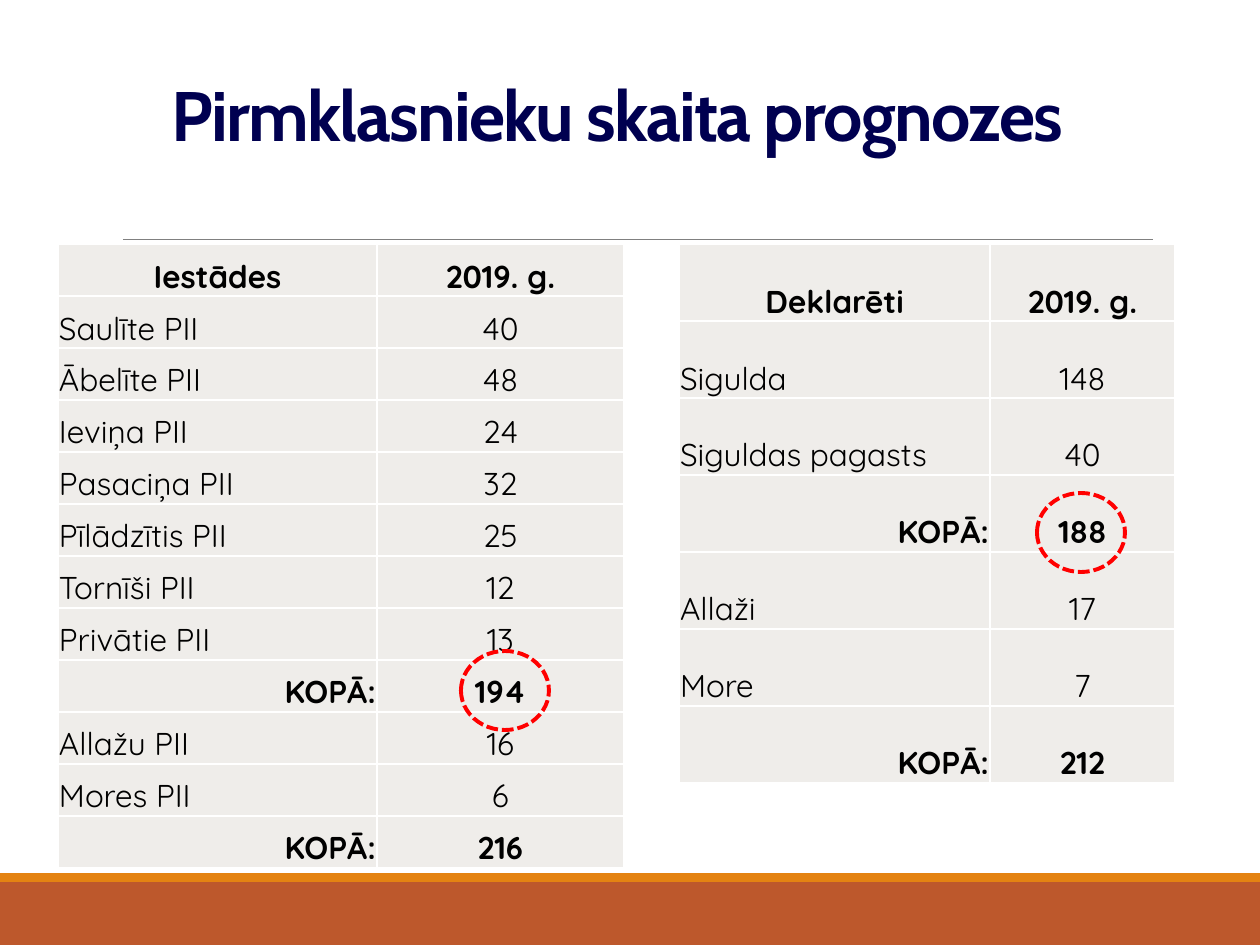
from dataclasses import dataclass

from lxml import etree
from pptx import Presentation
from pptx.dml.color import RGBColor
from pptx.enum import dml, shapes, text
from pptx.oxml.ns import qn
from pptx.util import Emu, Pt

EMU_PER_PX = 914400 / 126
ALIGN = text.PP_ALIGN
TOTAL = "KOPĀ:"


@dataclass(frozen=True)
class Bar:
    top: int
    height: int
    color: str


@dataclass(frozen=True)
class CountTable:
    left: int
    top: int
    columns: tuple[int, int]
    row_height: int
    rows: tuple[tuple[str, str], ...]


@dataclass(frozen=True)
class Ring:
    left: int
    top: int
    width: int = 88
    height: int = 79


BARS = (Bar(882, 63, "BD582C"), Bar(873, 9, "E48312"))

TABLES = (
    CountTable(58, 244, (319, 247), 52, (
        ("Iestādes", "2019. g."),
        ("Saulīte PII", "40"),
        ("Ābelīte PII", "48"),
        ("Ieviņa PII", "24"),
        ("Pasaciņa PII", "32"),
        ("Pīlādzītis PII", "25"),
        ("Tornīši PII", "12"),
        ("Privātie PII", "13"),
        (TOTAL, "194"),
        ("Allažu PII", "16"),
        ("Mores PII", "6"),
        (TOTAL, "216"),
    )),
    CountTable(679, 244, (311, 185), 77, (
        ("Deklarēti", "2019. g."),
        ("Sigulda", "148"),
        ("Siguldas pagasts", "40"),
        (TOTAL, "188"),
        ("Allaži", "17"),
        ("More", "7"),
        (TOTAL, "212"),
    )),
)

RINGS = (Ring(461, 651), Ring(1037, 493))


def px(length: int) -> Emu:
    return Emu(round(length * EMU_PER_PX))


def rgb(color: str) -> RGBColor:
    return RGBColor.from_string(color)


def add_span(para, words: str, font: str, size: int, color: str, bold: bool):
    span = para.add_run()
    span.text = words
    span.font.name = font
    span.font.size = Pt(size)
    span.font.bold = bold
    span.font.color.rgb = rgb(color)
    return span


def draw_bar(page, bar: Bar) -> None:
    box = page.shapes.add_shape(shapes.MSO_SHAPE.RECTANGLE, 0, px(bar.top), px(1260), px(bar.height))
    box.shadow.inherit = False
    box.fill.solid()
    box.fill.fore_color.rgb = rgb(bar.color)
    box.line.fill.background()


def draw_rule(page) -> None:
    rule = page.shapes.add_connector(shapes.MSO_CONNECTOR.STRAIGHT, px(123), px(239), px(1153), px(239))
    rule.line.color.rgb = rgb("808080")
    rule.line.width = Pt(0.5)
    etree.SubElement(rule._element.spPr, qn("a:effectLst"))


def add_borders(cell, color: str, width: Emu) -> None:
    properties = cell._tc.get_or_add_tcPr()
    for side in ("a:lnL", "a:lnR", "a:lnT", "a:lnB"):
        border = etree.SubElement(properties, qn(side), w=str(width))
        fill = etree.SubElement(border, qn("a:solidFill"))
        etree.SubElement(fill, qn("a:srgbClr"), val=color)


def fill_cell(cell, words: str, align, bold: bool) -> None:
    add_borders(cell, "FFFFFF", Pt(1))
    cell.fill.solid()
    cell.fill.fore_color.rgb = rgb("EFEDEA")
    cell.margin_left = cell.margin_right = cell.margin_top = px(1)
    cell.margin_bottom = 0
    cell.vertical_anchor = text.MSO_ANCHOR.BOTTOM
    para = cell.text_frame.paragraphs[0]
    para.alignment = align
    add_span(para, words, "Quicksand", 18, "000000", bold)


def draw_table(page, spec: CountTable) -> None:
    frame = page.shapes.add_table(
        len(spec.rows), len(spec.columns), px(spec.left), px(spec.top),
        px(sum(spec.columns)), px(spec.row_height * len(spec.rows)))
    table = frame.table
    for column, width in zip(table.columns, spec.columns):
        column.width = px(width)
    for index, (label, count) in enumerate(spec.rows):
        table.rows[index].height = px(spec.row_height)
        is_header, is_total = index == 0, label == TOTAL
        label_align = ALIGN.CENTER if is_header else ALIGN.RIGHT if is_total else ALIGN.LEFT
        bold = is_header or is_total
        fill_cell(table.cell(index, 0), label, label_align, bold)
        fill_cell(table.cell(index, 1), count, ALIGN.CENTER, bold)


def draw_title(page) -> None:
    box = page.shapes.add_textbox(px(23), px(26), px(1203), px(175))
    frame = box.text_frame
    frame.word_wrap = True
    frame.vertical_anchor = text.MSO_ANCHOR.MIDDLE
    para = frame.paragraphs[0]
    para.alignment = ALIGN.CENTER
    span = add_span(para, "Pirmklasnieku skaita prognozes ", "Cabin", 40, "000050", True)
    span.font._element.set("spc", "-100")


def draw_ring(page, ring: Ring) -> None:
    oval = page.shapes.add_shape(
        shapes.MSO_SHAPE.OVAL, px(ring.left), px(ring.top), px(ring.width), px(ring.height))
    oval.shadow.inherit = False
    oval.fill.background()
    oval.line.color.rgb = rgb("FF0000")
    oval.line.width = Pt(2.25)
    oval.line.dash_style = dml.MSO_LINE.SQUARE_DOT


def main() -> None:
    deck = Presentation()
    deck.slide_width, deck.slide_height = px(1260), px(945)
    page = deck.slides.add_slide(deck.slide_layouts[6])

    # Footer bars and the rule under the title
    for bar in BARS:
        draw_bar(page, bar)
    draw_rule(page)

    # Pupil counts by institution and by declared residence
    for table in TABLES:
        draw_table(page, table)

    draw_title(page)

    # Rings around the two subtotals being compared
    for ring in RINGS:
        draw_ring(page, ring)

    deck.save("out.pptx")


if __name__ == "__main__":
    main()
